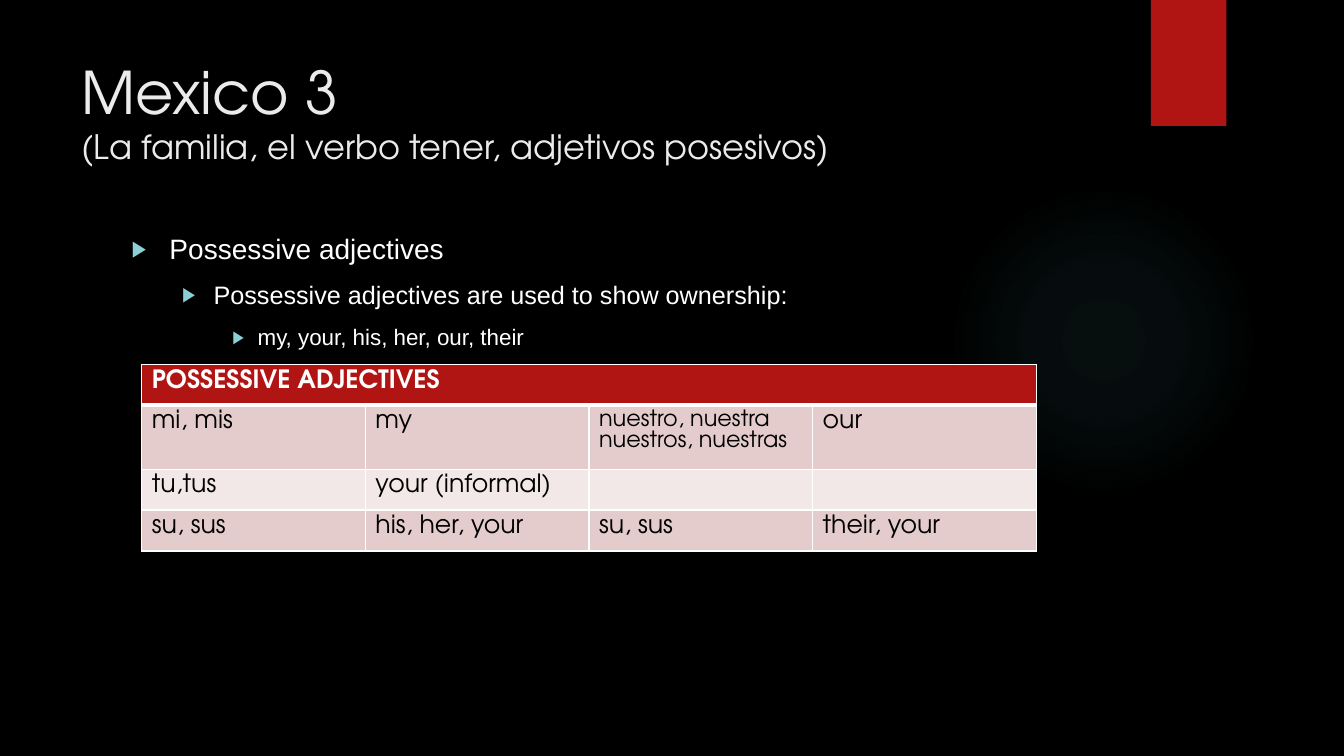
from dataclasses import dataclass

from lxml.etree import SubElement
from pptx import Presentation
from pptx.dml.color import RGBColor
from pptx.enum.shapes import MSO_SHAPE
from pptx.enum.text import MSO_ANCHOR
from pptx.oxml import parse_xml
from pptx.oxml.ns import nsdecls, qn
from pptx.util import Pt

TITLE_LINES = [("Mexico 3", 42), ("(La familia, el verbo tener, adjetivos posesivos)", 24)]
BULLETS = [
    ("Possessive adjectives", 20, 36, 36),
    ("Possessive adjectives are used to show ownership:", 18, 78, 30),
    ("my, your, his, her, our, their", 16, 120, 24),
]
TABLE_ROWS = [
    ["POSSESSIVE ADJECTIVES", "", "", ""],
    ["mi, mis", "my", "nuestro, nuestra\nnuestros, nuestras", "our"],
    ["tu,tus", "your (informal)", "", ""],
    ["su, sus", "his, her, your", "su, sus", "their, your"],
]
ROW_HEIGHTS = [39, 48, 39, 39]
COLUMN_WIDTH = 213

SLIDE_SIZE = (1280, 720)
GLOW_BOX = (903, 176, 296, 296)
RIBBON_BOX = (1096, 0, 72, 120)
TITLE_BOX = (68, 48, 988, 147)
BODY_BOX = (116, 216, 939, 441)
TABLE_ORIGIN = (135, 347)
GLOW_STOPS = [(0, 7), (36, 6), (69, 0), (100, 0)]


@dataclass(frozen=True)
class Theme:
    background: str = "000000"
    accent: str = "B01513"
    glow: str = "50B9C1"
    bullet: str = "8AD0D6"
    title: str = "EBEBEB"
    light: str = "FFFFFF"
    dark: str = "000000"
    odd_row: str = "E4CCCC"
    even_row: str = "F2E8E7"
    display_font: str = "TeX Gyre Adventor"
    body_font: str = "Arial"
    cell_size: int = 18
    small_cell_size: int = 16
    bullet_gap: int = 10
    border: int = 1
    header_border: int = 3


THEME = Theme()


def px(length):
    return length * 9525


def color(value):
    return RGBColor.from_string(value)


def format_run(run, size, font_name, font_color, bold=False):
    run.font.size = Pt(size)
    run.font.name = font_name
    run.font.color.rgb = color(font_color)
    run.font.bold = bold


def add_shape(slide, kind, box):
    shape = slide.shapes.add_shape(kind, *map(px, box))
    shape.shadow.inherit = False
    shape.line.fill.background()
    return shape


def add_glow(slide):
    shape = add_shape(slide, MSO_SHAPE.OVAL, GLOW_BOX)
    stops = "".join(
        f'<a:gs pos="{position * 1000}"><a:srgbClr val="{THEME.glow}">'
        f'<a:alpha val="{opacity * 1000}"/></a:srgbClr></a:gs>'
        for position, opacity in GLOW_STOPS
    )
    gradient = parse_xml(
        f'<a:gradFill {nsdecls("a")} rotWithShape="1"><a:gsLst>{stops}</a:gsLst>'
        '<a:path path="circle"><a:fillToRect l="50000" t="50000" r="50000" b="50000"/>'
        "</a:path></a:gradFill>"
    )
    shape.element.spPr.find(qn("a:prstGeom")).addnext(gradient)


def add_ribbon(slide):
    shape = add_shape(slide, MSO_SHAPE.RECTANGLE, RIBBON_BOX)
    shape.fill.solid()
    shape.fill.fore_color.rgb = color(THEME.accent)


def add_text_frame(slide, box):
    text_frame = slide.shapes.add_textbox(*map(px, box)).text_frame
    text_frame.word_wrap = True
    text_frame.vertical_anchor = MSO_ANCHOR.TOP
    return text_frame


def add_title(slide):
    paragraph = add_text_frame(slide, TITLE_BOX).paragraphs[0]
    paragraph.text = "\v".join(text for text, size in TITLE_LINES)
    for run, (text, size) in zip(paragraph.runs, TITLE_LINES):
        format_run(run, size, THEME.display_font, THEME.title)


def add_bullet(paragraph, margin, hanging):
    properties = paragraph._p.get_or_add_pPr()
    properties.set("marL", str(px(margin)))
    properties.set("indent", str(-px(hanging)))
    bullet_color = SubElement(properties, qn("a:buClr"))
    SubElement(bullet_color, qn("a:srgbClr"), val=THEME.bullet)
    SubElement(properties, qn("a:buSzPct"), val="80000")
    SubElement(properties, qn("a:buFont"), typeface=THEME.body_font)
    SubElement(properties, qn("a:buChar"), char="▶")


def add_body(slide):
    text_frame = add_text_frame(slide, BODY_BOX)
    text_frame.text = "\n".join(item[0] for item in BULLETS)
    for level, (text, size, margin, hanging) in enumerate(BULLETS):
        paragraph = text_frame.paragraphs[level]
        paragraph.level = level
        if level:
            paragraph.space_before = Pt(THEME.bullet_gap)
        add_bullet(paragraph, margin, hanging)
        format_run(paragraph.runs[0], size, THEME.body_font, THEME.light)


def add_borders(cell, row_index):
    top = THEME.header_border if row_index == 1 else THEME.border
    bottom = THEME.header_border if row_index == 0 else THEME.border
    properties = cell._tc.get_or_add_tcPr()
    for side, width in (("L", THEME.border), ("R", THEME.border), ("T", top), ("B", bottom)):
        line = SubElement(properties, qn(f"a:ln{side}"), w=str(Pt(width)))
        fill = SubElement(line, qn("a:solidFill"))
        SubElement(fill, qn("a:srgbClr"), val=THEME.light)


def fill_cell(cell, text, row_index):
    header = row_index == 0
    row_fill = THEME.odd_row if row_index % 2 else THEME.even_row
    size = THEME.small_cell_size if "\n" in text else THEME.cell_size
    add_borders(cell, row_index)
    cell.fill.solid()
    cell.fill.fore_color.rgb = color(THEME.accent if header else row_fill)
    cell.text_frame.text = text
    for paragraph in cell.text_frame.paragraphs:
        for run in paragraph.runs:
            format_run(run, size, THEME.display_font, THEME.light if header else THEME.dark, header)


def add_adjective_table(slide):
    column_count = len(TABLE_ROWS[0])
    size = (COLUMN_WIDTH * column_count, sum(ROW_HEIGHTS))
    table = slide.shapes.add_table(
        len(TABLE_ROWS), column_count, *map(px, TABLE_ORIGIN + size)
    ).table
    for column in table.columns:
        column.width = px(COLUMN_WIDTH)
    for row_index, (texts, height) in enumerate(zip(TABLE_ROWS, ROW_HEIGHTS)):
        table.rows[row_index].height = px(height)
        for column_index, text in enumerate(texts):
            fill_cell(table.cell(row_index, column_index), text, row_index)
    table.cell(0, 0).merge(table.cell(0, column_count - 1))


def main():
    presentation = Presentation()
    presentation.slide_width, presentation.slide_height = map(px, SLIDE_SIZE)
    slide = presentation.slides.add_slide(presentation.slide_layouts[6])
    slide.background.fill.solid()
    slide.background.fill.fore_color.rgb = color(THEME.background)
    add_glow(slide)
    add_ribbon(slide)
    add_title(slide)
    add_body(slide)
    add_adjective_table(slide)
    presentation.save("out.pptx")


if __name__ == "__main__":
    main()
